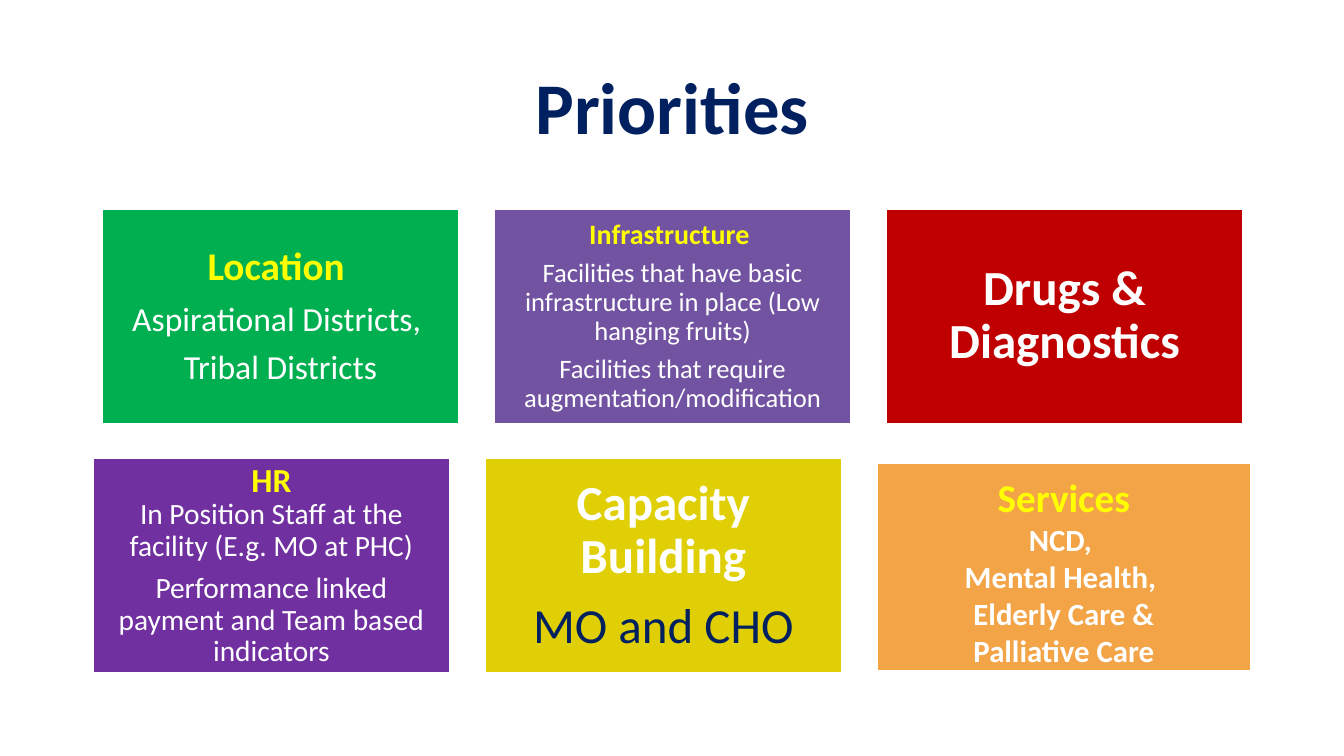
import pptx
import pptx.util
import pptx.dml.color
import pptx.enum.shapes
import pptx.enum.text

Cm, Pt = pptx.util.Cm, pptx.util.Pt
ANCHOR = pptx.enum.text.MSO_ANCHOR
CENTER = pptx.enum.text.PP_ALIGN.CENTER

NAVY, WHITE, YELLOW = "002060", "FFFFFF", "FFFF00"
TILE_WIDTH, TILE_HEIGHT, TILE_PITCH = 9, 5.39, 9.88
ROW_LEFTS, ROW_TOPS = (2.57, 2.34), (5.28, 11.56)
SPACE_RATIO = 0.35


def color(hex_code):
    return pptx.dml.color.RGBColor.from_string(hex_code)


def apply(target, values):
    for name, value in values.items():
        setattr(target, name, value)


def line(text, size, hex_code=WHITE, bold=False, spacing=0.9, after=SPACE_RATIO):
    """Describe one paragraph; after is a share of the text size."""
    return {"text": text, "size": size, "color": hex_code, "bold": bold,
            "spacing": spacing, "after": after}


class PrioritiesSlide:
    font_name = "Calibri"

    def __init__(self, presentation):
        self.slide = presentation.slides.add_slide(presentation.slide_layouts[5])

    def fill_text(self, frame, lines, inset, anchor=ANCHOR.MIDDLE):
        margins = {f"margin_{side}": Cm(inset) for side in ("left", "top", "right", "bottom")}
        apply(frame, {"word_wrap": True, "vertical_anchor": anchor, **margins})
        for index, content in enumerate(lines):
            paragraph = frame.add_paragraph() if index else frame.paragraphs[0]
            apply(paragraph, {
                "alignment": CENTER,
                "line_spacing": content["spacing"],
                "space_before": Pt(0),
                "space_after": Pt(round(content["size"] * content["after"], 1)),
            })
            run = paragraph.add_run()
            run.text = content["text"]
            apply(run.font, {"name": self.font_name, "size": Pt(content["size"]),
                             "bold": content["bold"]})
            run.font.color.rgb = color(content["color"])

    def title(self, text):
        heading = self.slide.shapes.title
        apply(heading, {"left": Cm(2.34), "top": Cm(1.55),
                        "width": Cm(29.2), "height": Cm(2.49)})
        self.fill_text(heading.text_frame, [line(text, 52, NAVY, True, after=0)], 0.2)

    def tile(self, box, fill, lines, inset, anchor=ANCHOR.MIDDLE):
        rectangle = self.slide.shapes.add_shape(
            pptx.enum.shapes.MSO_SHAPE.RECTANGLE, *map(Cm, box))
        rectangle.shadow.inherit = False
        rectangle.fill.solid()
        rectangle.fill.fore_color.rgb = color(fill)
        rectangle.line.color.rgb = color(WHITE)
        rectangle.line.width = Pt(1)
        self.fill_text(rectangle.text_frame, lines, inset, anchor)


# Each entry: row, column, fill, inset, lines
GRID_TILES = [
    (0, 0, "00B050", 0.3, [
        line("Location ", 28, YELLOW, True),
        line("Aspirational Districts, ", 24),
        line("Tribal Districts", 24)]),
    (0, 1, "7153A1", 0.2, [
        line("Infrastructure ", 20, YELLOW, True),
        line("Facilities that have basic infrastructure in place (Low hanging fruits)", 19),
        line("Facilities that require augmentation/modification", 19)]),
    (0, 2, "C00000", 0.38, [line("Drugs & Diagnostics", 35, bold=True)]),
    (1, 0, "7030A0", 0.25, [
        line("HR", 24, YELLOW, True, after=0),
        line("In Position Staff at the facility (E.g. MO at PHC)", 21),
        line("Performance linked payment and Team based indicators", 21)]),
    (1, 1, "DFCF04", 0.38, [
        line("Capacity Building", 35, bold=True),
        line("MO and CHO", 35, NAVY)]),
]
SERVICES = ["NCD, ", "Mental Health, ", "Elderly Care &", "Palliative Care"]


def main():
    presentation = pptx.Presentation()
    apply(presentation, {"slide_width": Cm(33.87), "slide_height": Cm(19.05)})
    priorities = PrioritiesSlide(presentation)
    priorities.title("Priorities")
    for row, column, fill, inset, lines in GRID_TILES:
        left = ROW_LEFTS[row] + column * TILE_PITCH
        priorities.tile((left, ROW_TOPS[row], TILE_WIDTH, TILE_HEIGHT), fill, lines, inset)
    services_lines = [line("Services", 28, YELLOW, True, 1.0, 0)]
    services_lines += [line(name, 22, WHITE, True, 1.0, 0) for name in SERVICES]
    priorities.tile((22.1, 11.68, 9.42, 5.23), "F3A447", services_lines, 0.25, ANCHOR.TOP)
    presentation.save("out.pptx")


if __name__ == "__main__":
    main()
